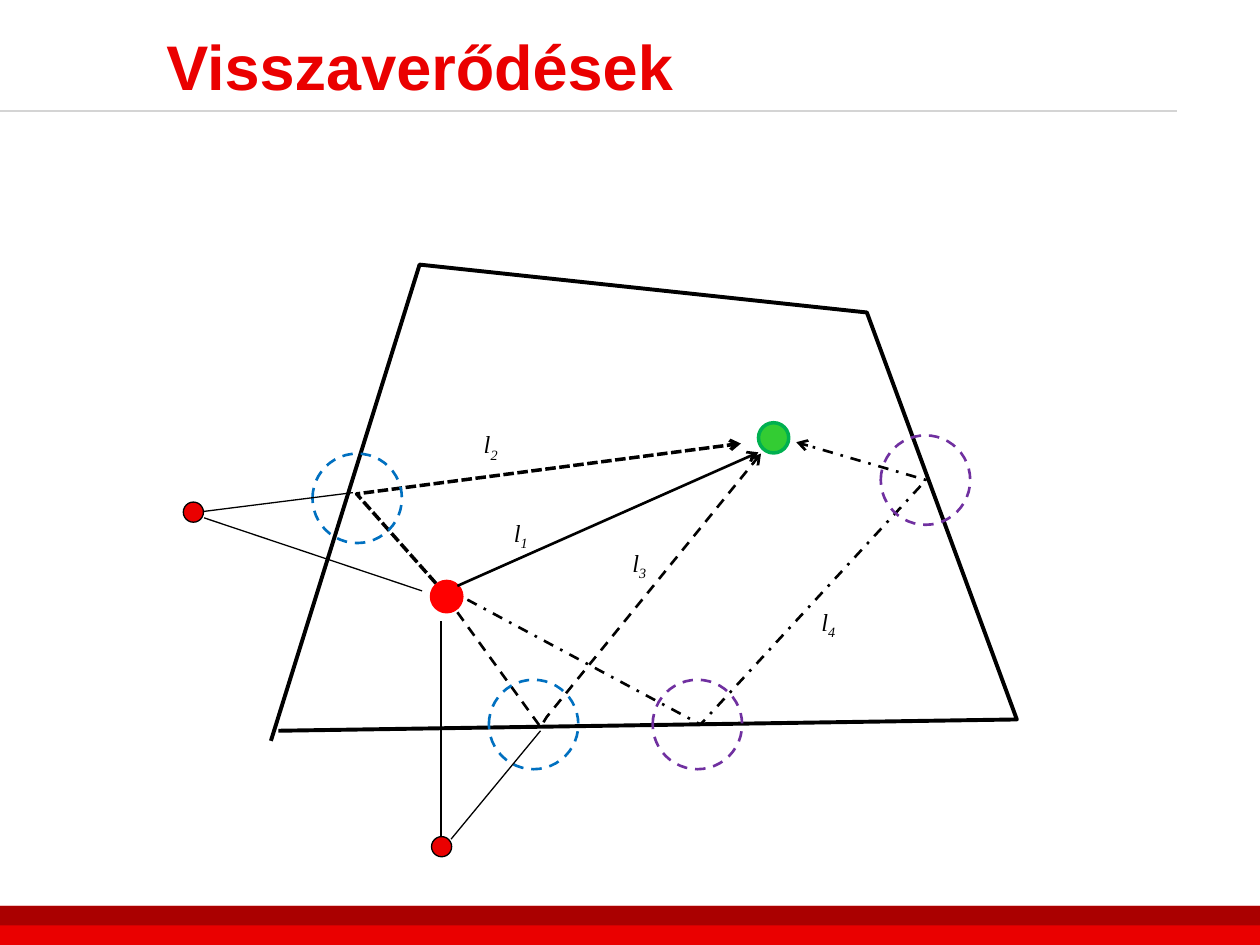
from dataclasses import dataclass
from pptx import Presentation
from pptx.dml.color import RGBColor
from pptx.enum.dml import MSO_LINE as Dash
from pptx.enum.shapes import MSO_CONNECTOR as Conn, MSO_SHAPE as Shape
from pptx.enum.text import MSO_ANCHOR as Anchor, PP_ALIGN as Align
from pptx.oxml.ns import qn
from pptx.util import Inches, Pt
from lxml.etree import SubElement


@dataclass(frozen=True)
class Theme:
    red: str = "EA0000"
    dark: str = "AA0000"
    rule: str = "D4D4D4"
    ink: str = "000000"
    source: str = "FF0000"
    target: str = "33CC33"
    rim: str = "00B050"
    blue: str = "0070C0"
    purple: str = "7030A0"
    head: str = "Arial"
    serif: str = "Times New Roman"
    big: int = 36
    small: int = 14


@dataclass(frozen=True)
class Grid:
    """A box in inches, cut into columns and rows."""
    left: float
    top: float
    width: float
    height: float
    cols: int = 1
    rows: int = 1

    def spot(self, col, row):
        return (Inches(self.left + col * self.width / self.cols),
                Inches(self.top + row * self.height / self.rows))

    def span(self, cols, rows):
        return (Inches(cols * self.width / self.cols),
                Inches(rows * self.height / self.rows))


T = Theme()
WIDE, HIGH = 10, 7.5


def rgb(code):
    return RGBColor.from_string(code)


def write(para, text, font=T.head, size=T.small, color=T.ink,
          bold=False, italic=False, base=0):
    run = para.add_run()
    run.text = text
    run.font.name, run.font.size = font, Pt(size)
    run.font.bold, run.font.italic = bold, italic
    run.font.color.rgb = rgb(color)
    if base:
        run._r.get_or_add_rPr().set("baseline", str(base * 1000))


def stroke(shape, color=T.ink, width=1.5, dash=None, arrow=False):
    line = shape.line
    line.color.rgb, line.width = rgb(color), Pt(width)
    if dash:
        line.dash_style = dash
    if arrow:
        SubElement(line._get_or_add_ln(), qn("a:tailEnd"), type="arrow")


def paint(shape, fill):
    shape.shadow.inherit = False
    if fill:
        shape.fill.solid()
        shape.fill.fore_color.rgb = rgb(fill)
    else:
        shape.fill.background()


def link(slide, grid, start, end, **style):
    line = slide.shapes.add_connector(
        Conn.STRAIGHT, *grid.spot(*start), *grid.spot(*end))
    SubElement(line._element.spPr, qn("a:effectLst"))
    stroke(line, **style)


def route(slide, grid, points, **style):
    first, *rest = [grid.spot(*point) for point in points]
    build = slide.shapes.build_freeform(*first)
    build.add_line_segments(rest, close=False)
    shape = build.convert_to_shape()
    paint(shape, None)
    stroke(shape, **style)


def disc(slide, grid, mid, size, fill=None, **style):
    corner = grid.spot(mid[0] - size / 2, mid[1] - size / 2)
    shape = slide.shapes.add_shape(Shape.OVAL, *corner, *grid.span(size, size))
    paint(shape, fill)
    stroke(shape, **style)


def label(slide, grid, place, index):
    box = slide.shapes.add_textbox(*grid.spot(*place), *grid.span(5.5, 3.3))
    box.text_frame.word_wrap = True
    para = box.text_frame.paragraphs[0]
    write(para, "l", font=T.serif, italic=True)
    write(para, index, font=T.serif, italic=True, base=-25)


def footer(slide, grid):
    for color, rows in ((T.red, 2), (T.dark, 1)):
        bar = slide.shapes.add_shape(
            Shape.RECTANGLE, *grid.spot(0, 0), *grid.span(1, rows))
        paint(bar, color)
        bar.line.fill.background()


def header(slide, grid, text):
    link(slide, grid, (0, 88), (93.4, 88), color=T.rule)
    title = slide.shapes.title
    title.left, title.top = grid.spot(12.2, 8)
    title.width, title.height = grid.span(87.4, 87)
    frame = title.text_frame
    frame.vertical_anchor = Anchor.MIDDLE
    frame.paragraphs[0].alignment = Align.LEFT
    write(frame.paragraphs[0], text, size=T.big, color=T.red, bold=True)


def room(slide, grid):
    # Walls, source and target
    route(slide, grid, [(11.5, 38.8), (23.3, 1), (58.8, 4.8),
                        (70.7, 37.1), (12.1, 38)], width=2.25)
    disc(slide, grid, (25.45, 27.35), 2.4, T.source, color=T.source, width=2)
    disc(slide, grid, (51.4, 14.75), 2.4, T.target, color=T.rim, width=2)

    # Sound paths
    route(slide, grid, [(26.3, 28.6), (32.9, 37.7), (33.4, 36.9), (50.4, 16)],
          dash=Dash.DASH, arrow=True)
    link(slide, grid, (26.3, 26.5), (50.2, 15.9), arrow=True)
    route(slide, grid, [(24.6, 26.3), (18.3, 19.2), (48.8, 15.2)],
          width=2, dash=Dash.SQUARE_DOT, arrow=True)
    route(slide, grid, [(27.1, 27.6), (45.6, 37.5), (63.5, 18.1), (53.2, 15.1)],
          dash=Dash.DASH_DOT, arrow=True)

    # Reflection zones on the walls
    for mid, color in (((18.35, 19.55), T.blue), ((63.45, 18.1), T.purple),
                       ((45.35, 37.5), T.purple), ((32.35, 37.5), T.blue)):
        disc(slide, grid, mid, 7.1, color=color, dash=Dash.DASH)

    # Mirror sources and their rays
    for mid, *rays in (
            ((5.35, 20.65), ((18, 19.1), (6.1, 20.6)), ((6.2, 21.1), (23.5, 26.9))),
            ((25.05, 47.2), ((32.9, 38), (25.8, 46.6)), ((25, 29.3), (25, 46.6)))):
        for start, end in rays:
            link(slide, grid, start, end, width=0.75)
        disc(slide, grid, mid, 1.6, T.red, width=0.75)

    # Path names
    for index, place in (("1", (29.8, 20.6)), ("3", (39.2, 23)),
                         ("4", (54.2, 27.7)), ("2", (27.4, 13.6))):
        label(slide, grid, place, index)


def main():
    deck = Presentation()
    deck.slide_width, deck.slide_height = Inches(WIDE), Inches(HIGH)
    slide = deck.slides.add_slide(deck.slide_layouts[5])
    footer(slide, Grid(0, 7.19, WIDE, 0.31, rows=2))
    header(slide, Grid(0, 0, WIDE, 1, cols=100, rows=100), "Visszaverődések")
    room(slide, Grid(1, 2, 8, 5, cols=80, rows=50))
    deck.save("out.pptx")


if __name__ == "__main__":
    main()
